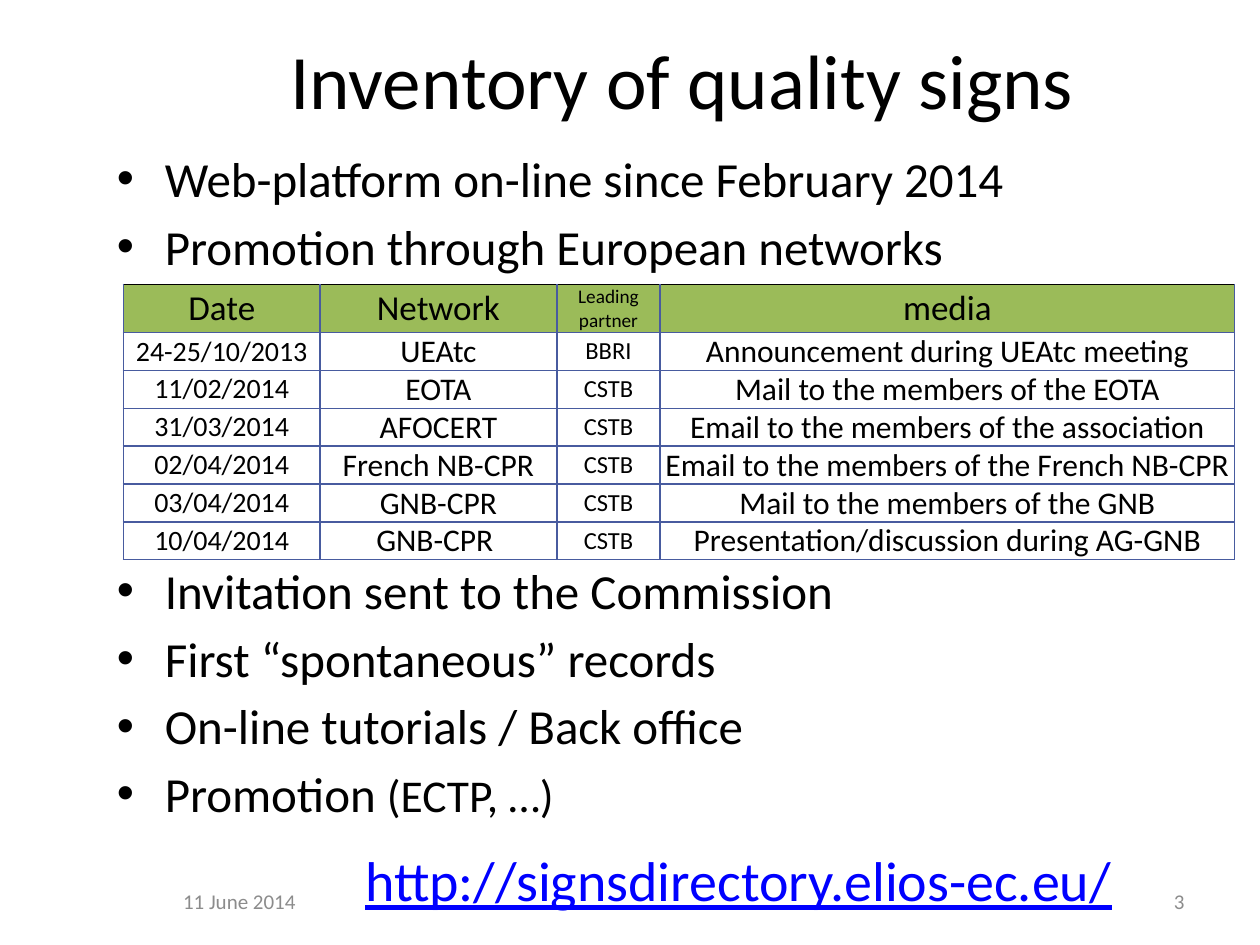
from dataclasses import dataclass

from lxml import etree
from pptx import Presentation
from pptx.dml.color import RGBColor
from pptx.enum.text import MSO_ANCHOR, PP_ALIGN
from pptx.oxml.ns import qn
from pptx.util import Inches, Pt

LEFT, CENTER, RIGHT = PP_ALIGN.LEFT, PP_ALIGN.CENTER, PP_ALIGN.RIGHT
TOP, MIDDLE = MSO_ANCHOR.TOP, MSO_ANCHOR.MIDDLE


@dataclass(frozen=True)
class Theme:
    font: str = "Calibri"
    ink: str = "000000"
    muted: str = "8C8C8C"
    link: str = "0000FF"
    header_fill: str = "9BBB59"
    grid: str = "485B9F"
    title: int = 44
    body: int = 28
    aside: int = 26
    url: int = 32
    footer: int = 12
    header_sizes: tuple = (20, 20, 11, 20)
    row_sizes: tuple = (16, 18, 14, 18)


THEME = Theme()

BULLETS_ABOVE = [
    [("Web-platform on-line since February 2014", THEME.body)],
    [("Promotion through European networks", THEME.body)],
]
BULLETS_BELOW = [
    [("Invitation sent to the Commission", THEME.body)],
    [("First “spontaneous” records", THEME.body)],
    [("On-line tutorials / Back office", THEME.body)],
    [("Promotion ", THEME.body), ("(ECTP, …)", THEME.aside)],
]
PROMOTIONS = [
    ("Date", "Network", "Leading partner", "media"),
    ("24-25/10/2013", "UEAtc", "BBRI", "Announcement during UEAtc meeting"),
    ("11/02/2014", "EOTA", "CSTB", "Mail to the members of the EOTA"),
    ("31/03/2014", "AFOCERT", "CSTB", "Email to the members of the association"),
    ("02/04/2014", "French NB-CPR", "CSTB", "Email to the members of the French NB-CPR"),
    ("03/04/2014", "GNB-CPR", "CSTB", "Mail to the members of the GNB"),
    ("10/04/2014", "GNB-CPR ", "CSTB", "Presentation/discussion during AG-GNB"),
]
COLUMN_WIDTHS = (1.56, 1.88, 0.82, 4.56)
HEADER_HEIGHT, ROW_HEIGHT = 0.38, 0.3


def add_run(paragraph, text, size, color=THEME.ink):
    run = paragraph.add_run()
    run.text = text
    run.font.name = THEME.font
    run.font.size = Pt(size)
    run.font.color.rgb = RGBColor.from_string(color)
    return run


def add_frame(slide, box, anchor=TOP, wrap=True):
    frame = slide.shapes.add_textbox(*map(Inches, box)).text_frame
    frame.word_wrap = wrap
    frame.vertical_anchor = anchor
    return frame


def add_line(slide, box, text, size, color, align, wrap=True):
    paragraph = add_frame(slide, box, MIDDLE, wrap).paragraphs[0]
    paragraph.alignment = align
    return add_run(paragraph, text, size, color)


def add_bullets(slide, box, items):
    frame = add_frame(slide, box)
    for index, runs in enumerate(items):
        paragraph = frame.add_paragraph() if index else frame.paragraphs[0]
        properties = paragraph._p.get_or_add_pPr()
        properties.set("marL", str(Inches(0.38)))
        properties.set("indent", str(Inches(-0.38)))
        if index:
            paragraph.space_before = Pt(5)
        etree.SubElement(properties, qn("a:buFont"), typeface="Arial")
        etree.SubElement(properties, qn("a:buChar"), char="•")
        for text, size in runs:
            add_run(paragraph, text, size)


def add_borders(cell, top_color):
    properties = cell._tc.get_or_add_tcPr()
    sides = {"lnL": THEME.grid, "lnR": THEME.grid, "lnT": top_color, "lnB": THEME.grid}
    for position, (side, color) in enumerate(sides.items()):
        line = etree.Element(qn(f"a:{side}"), w=str(Pt(1)))
        fill = etree.SubElement(line, qn("a:solidFill"))
        etree.SubElement(fill, qn("a:srgbClr"), val=color)
        properties.insert(position, line)


def fill_cell(cell, text, size, is_header):
    cell.margin_left = cell.margin_right = Inches(0.02)
    cell.margin_top = cell.margin_bottom = 0
    cell.vertical_anchor = MIDDLE
    if is_header:
        cell.fill.solid()
        cell.fill.fore_color.rgb = RGBColor.from_string(THEME.header_fill)
    else:
        cell.fill.background()
    add_borders(cell, THEME.ink if is_header else THEME.grid)
    paragraph = cell.text_frame.paragraphs[0]
    paragraph.alignment = CENTER
    add_run(paragraph, text, size)


def add_promotions(slide, left, top):
    height = HEADER_HEIGHT + ROW_HEIGHT * (len(PROMOTIONS) - 1)
    box = (left, top, sum(COLUMN_WIDTHS), height)
    table = slide.shapes.add_table(
        len(PROMOTIONS), len(COLUMN_WIDTHS), *map(Inches, box)).table
    table.horz_banding = False
    for column, width in zip(table.columns, COLUMN_WIDTHS):
        column.width = Inches(width)
    for index, texts in enumerate(PROMOTIONS):
        is_header = index == 0
        table.rows[index].height = Inches(HEADER_HEIGHT if is_header else ROW_HEIGHT)
        sizes = THEME.header_sizes if is_header else THEME.row_sizes
        for cell, text, size in zip(table.rows[index].cells, texts, sizes):
            fill_cell(cell, text, size, is_header)


def add_footer(slide, top, height):
    add_line(slide, (0.91, top, 1.98, height), "11 June 2014",
             THEME.footer, THEME.muted, CENTER)
    add_line(slide, (7.17, top, 2.33, height), "3",
             THEME.footer, THEME.muted, RIGHT)


def main():
    deck = Presentation()
    deck.slide_width, deck.slide_height = Inches(10), Inches(7.5)
    slide = deck.slides.add_slide(deck.slide_layouts[6])

    # Title
    add_line(slide, (0.83, 0, 9.17, 1.25), "Inventory of quality signs",
             THEME.title, THEME.ink, CENTER)

    # Bullets around the table of promotions
    add_bullets(slide, (0.83, 1.13, 9.17, 1.12), BULLETS_ABOVE)
    add_bullets(slide, (0.83, 4.4, 9.17, 2.25), BULLETS_BELOW)
    add_promotions(slide, 0.98, 2.26)

    # Footer and web address
    add_footer(slide, 6.95, 0.4)
    address = add_line(slide, (2.8, 6.66, 6.3, 0.64),
                       "http://signsdirectory.elios-ec.eu/",
                       THEME.url, THEME.link, LEFT)
    address.font.underline = True

    deck.save("out.pptx")


if __name__ == "__main__":
    main()
